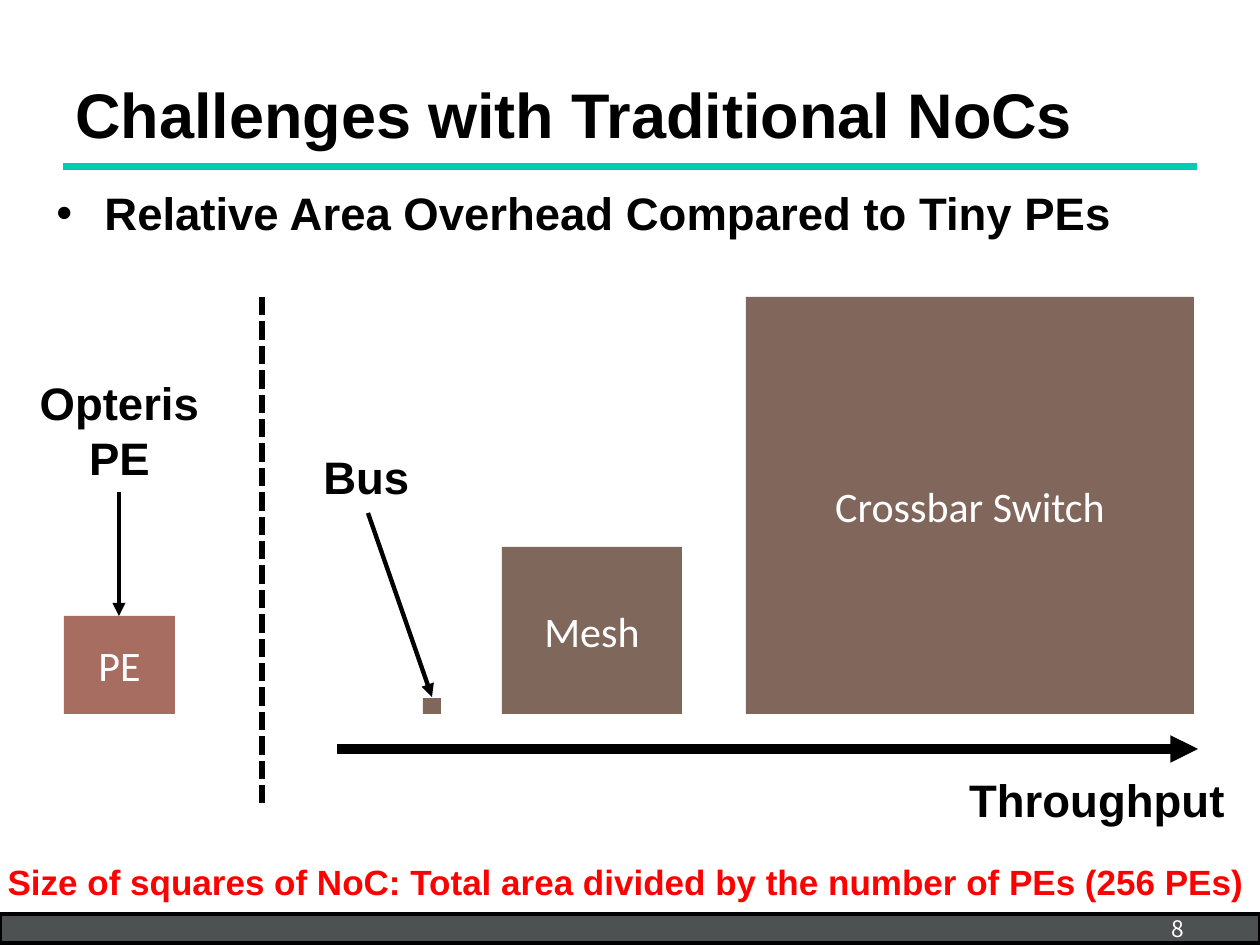
from pptx import Presentation
from pptx.dml.color import RGBColor
from pptx.enum.dml import MSO_LINE
from pptx.enum.shapes import MSO_CONNECTOR, MSO_SHAPE
from pptx.enum.text import MSO_ANCHOR, PP_ALIGN
from pptx.oxml.ns import qn
from pptx.util import Emu, Pt
from lxml import etree

PX = 914400 // 126
RECT = MSO_SHAPE.RECTANGLE
LINE = MSO_CONNECTOR.STRAIGHT
DASH = MSO_LINE.SQUARE_DOT
TOP, MID, LOW = MSO_ANCHOR.TOP, MSO_ANCHOR.MIDDLE, MSO_ANCHOR.BOTTOM
LEFT, CENTER, RIGHT = PP_ALIGN.LEFT, PP_ALIGN.CENTER, PP_ALIGN.RIGHT
BLACK, WHITE, RED = "000000", "FFFFFF", "FF0000"
BROWN, ROSE, TEAL, GRAY = "80675B", "A76D60", "00CCAF", "4E5152"
BASE = 714


def px(*vals):
    """Turn pixels into EMU."""
    return [Emu(v * PX) for v in vals]


def color(code):
    """Turn a hex string into a colour."""
    return RGBColor.from_string(code)


def write(shape, text, size=26, font="Arial", ink=BLACK, bold=True,
          align=CENTER, anchor=TOP, before=0.2):
    """Put formatted text into a shape."""
    frame = shape.text_frame
    frame.word_wrap = True
    frame.vertical_anchor = anchor
    para = frame.paragraphs[0]
    para.alignment = align
    para.space_before = Pt(size * before)
    run = para.add_run()
    run.text = text
    run.font.size = Pt(size)
    run.font.name = font
    run.font.bold = bold
    run.font.color.rgb = color(ink)
    return para


def label(slide, box, text, **form):
    """Add a text box."""
    return write(slide.shapes.add_textbox(*px(*box)), text, **form)


def block(slide, box, fill, text="", edge=None):
    """Add a filled rectangle with an optional name."""
    shape = slide.shapes.add_shape(RECT, *px(*box))
    shape.shadow.inherit = False
    shape.fill.solid()
    shape.fill.fore_color.rgb = color(fill)
    if edge:
        shape.line.color.rgb = color(edge)
        shape.line.width = Pt(2)
    else:
        shape.line.fill.background()
    if text:
        write(shape, text, size=24, font="Calibri", ink=WHITE, bold=False,
              anchor=MID, before=0)


def rule(slide, ends, width, ink=BLACK, head=False, dash=None):
    """Add a line, dashed or with an arrowhead if asked."""
    link = slide.shapes.add_connector(LINE, *px(*ends))
    link.line.color.rgb = color(ink)
    link.line.width = Pt(width)
    if dash:
        link.line.dash_style = dash
    if head:
        tail = etree.SubElement(link.line._get_or_add_ln(), qn("a:tailEnd"))
        tail.set("type", "triangle")
    etree.SubElement(link._element.spPr, qn("a:effectLst"))


def bullet(para, indent):
    """Give a paragraph a hanging bullet."""
    props = para._p.get_or_add_pPr()
    props.set("marL", str(indent * PX))
    props.set("indent", str(-indent * PX))
    font = etree.SubElement(props, qn("a:buFont"))
    font.set("typeface", "Arial")
    etree.SubElement(props, qn("a:buChar")).set("char", "•")


def frame(slide):
    """Draw the title, rule and footer."""
    block(slide, (0, 914, 1260, 29), GRAY, edge=BLACK)
    rule(slide, (63, 167, 1197, 167), 4, ink=TEAL)
    label(slide, (63, 63, 1134, 94), "Challenges with Traditional NoCs",
          size=36, align=LEFT, anchor=LOW, before=0)
    label(slide, (1018, 914, 179, 29), "8", size=13, bold=False, ink=WHITE,
          font="Noto Sans CJK KR", align=RIGHT, anchor=MID, before=0)


def chart(slide):
    """Draw the area squares, their names and the arrows."""
    squares = [(502, 180, 167, BROWN, "Mesh"),
               (746, 448, 417, "81675B", "Crossbar Switch"),
               (423, 18, 16, BROWN, ""),
               (64, 111, 98, ROSE, "PE")]
    for left, wide, high, fill, name in squares:
        block(slide, (left, BASE - high, wide, high), fill, name)
    rule(slide, (368, 513, 432, 697), 2.5, head=True)
    rule(slide, (119, 492, 119, 616), 2.5, head=True)
    rule(slide, (337, 749, 1198, 749), 5.25, head=True)
    rule(slide, (262, 297, 262, 807), 3.5, dash=DASH)
    label(slide, (311, 443, 115, 69), "Bus", align=LEFT)
    label(slide, (20, 369, 199, 123), "Opteris PE")
    label(slide, (955, 766, 284, 57), "Throughput")


def main():
    """Build the slide and save it."""
    deck = Presentation()
    deck.slide_width, deck.slide_height = px(1260, 945)
    slide = deck.slides.add_slide(deck.slide_layouts[6])
    frame(slide)
    chart(slide)
    label(slide, (-9, 854, 1270, 74),
          "Size of squares of NoC: Total area divided by the number of PEs "
          "(256 PEs)", size=20, ink=RED)
    point = label(slide, (44, 179, 1166, 74),
                  "Relative Area Overhead Compared to Tiny PEs", align=LEFT)
    bullet(point, 48)
    deck.save("out.pptx")


main()
